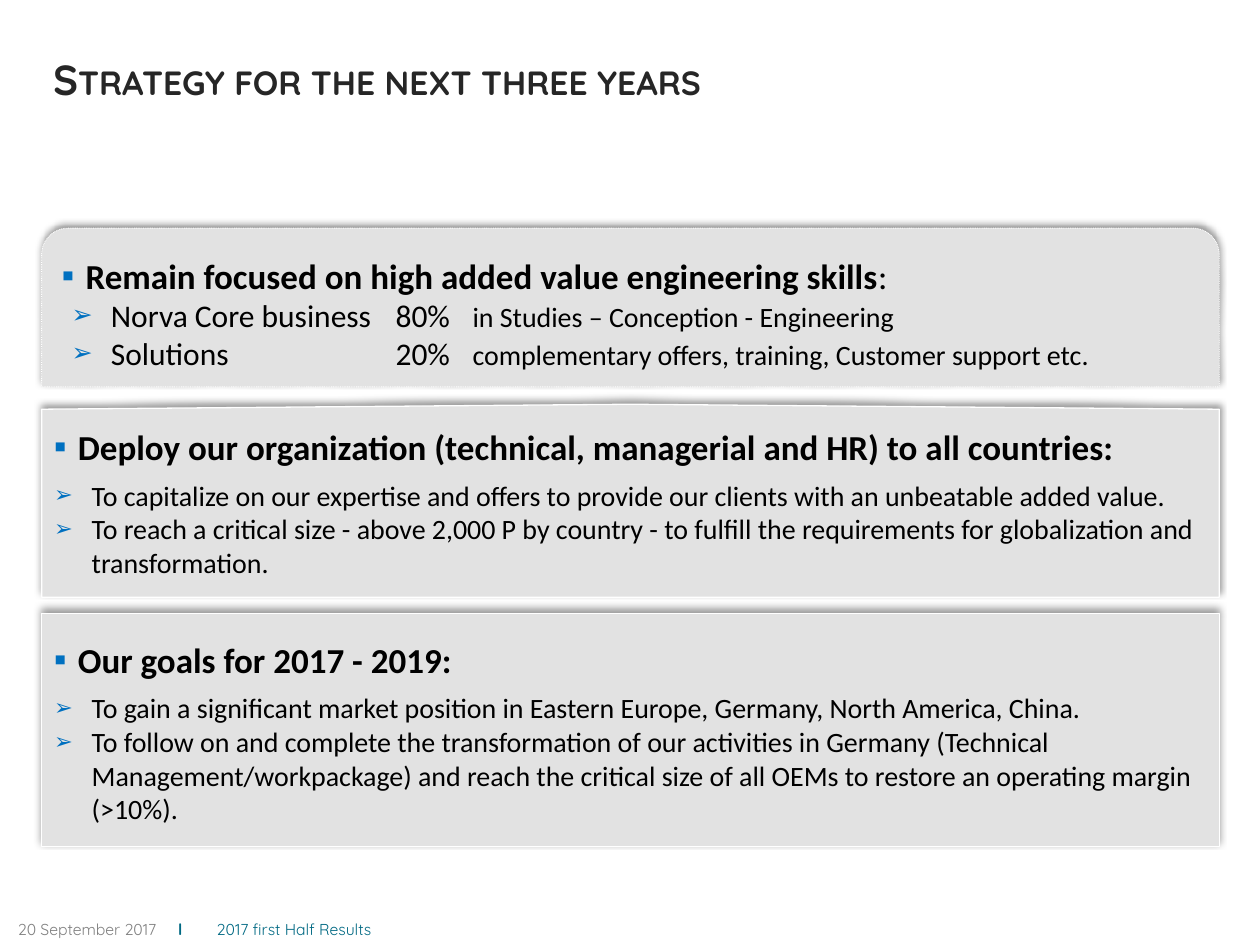
from dataclasses import dataclass
from typing import NamedTuple

from lxml.etree import SubElement
from pptx import Presentation
from pptx.dml.color import RGBColor
from pptx.enum.dml import MSO_LINE
from pptx.enum.shapes import MSO_SHAPE as Preset
from pptx.enum.text import MSO_ANCHOR as Anchor, MSO_AUTO_SIZE as AutoSize, PP_ALIGN as Align
from pptx.oxml.ns import qn
from pptx.util import Cm, Pt

BLACK = RGBColor(0x00, 0x00, 0x00)
WHITE = RGBColor(0xFF, 0xFF, 0xFF)
PANEL_GREY = RGBColor(0xE2, 0xE2, 0xE2)
TITLE_GREY = RGBColor(0x26, 0x26, 0x26)
DATE_GREY = RGBColor(0x80, 0x80, 0x80)
FOOTER_TEAL = RGBColor(0x00, 0x69, 0x83)
BULLET_BLUE = RGBColor(0x00, 0x70, 0xC0)

PANEL_LEFT = 0.84
PANEL_WIDTH = 23.74
ROOF_RISE = 0.1


class BulletStyle(NamedTuple):
    mark: str
    indent: float
    hanging: float
    mark_percent: int = 100
    level: int = 0


class Phrase(NamedTuple):
    text: str
    size: float = 16
    bold: bool = False


@dataclass
class Point:
    style: BulletStyle
    phrases: list[Phrase]
    tabs: tuple[float, ...] = ()
    gap_after: float = 0


@dataclass
class Panel:
    outline: str
    top: float
    height: float
    points: list[Point]
    border: float = 0.75


HEADING = BulletStyle("▪", 0.48, 0.48)
SHARE = BulletStyle("➢", 0.99, 0.79, 80, 1)
DETAIL = BulletStyle("➢", 0.76, 0.76, 80)
SHARE_TABS = (6.73, 8.28)


def heading(text: str) -> Point:
    return Point(HEADING, [Phrase(text, 20, True)], gap_after=6)


def share(name: str, percent: str, scope: str) -> Point:
    return Point(SHARE, [Phrase(f"{name}\t{percent}\t", 18), Phrase(scope)], SHARE_TABS)


def detail(text: str) -> Point:
    return Point(DETAIL, [Phrase(text)])


PANELS = [
    Panel("rounded", 4.6, 3.2, [
        Point(HEADING, [
            Phrase("Remain focused on high added value engineering skills", 20, True),
            Phrase(":", 20),
        ]),
        share("Norva Core business", "80%", "in Studies – Conception - Engineering"),
        share("Solutions", "20%", "complementary offers, training, Customer support etc."),
    ], border=0.5),
    Panel("roof", 8.15, 3.89, [
        heading("Deploy our organization (technical, managerial and HR) to all countries:"),
        detail("To capitalize on our expertise and offers to provide our clients "
               "with an unbeatable added value."),
        detail("To reach a critical size - above 2,000 P by country - to fulfill "
               "the requirements for globalization and transformation."),
    ]),
    Panel("plain", 12.37, 4.7, [
        heading("Our goals for 2017 - 2019:"),
        detail("To gain a significant market position in Eastern Europe, Germany, "
               "North America, China."),
        detail("To follow on and complete the transformation of our activities in Germany "
               "(Technical Management/workpackage) and reach the critical size of all OEMs "
               "to restore an operating margin (>10%)."),
    ]),
]


def write(paragraph, text: str, *, size: float, color: RGBColor = BLACK,
          font: str = "Calibri", bold: bool = False, small_caps: bool = False) -> None:
    run = paragraph.add_run()
    run.text = text
    run.font.size = Pt(size)
    run.font.name = font
    run.font.bold = bold
    run.font.color.rgb = color
    if small_caps:
        run.font._element.set("cap", "small")


def set_frame(frame, margins: tuple[float, ...] = (0, 0, 0, 0)) -> None:
    frame.auto_size = AutoSize.NONE
    frame.word_wrap = True
    frame.vertical_anchor = Anchor.MIDDLE
    (frame.margin_left, frame.margin_top,
     frame.margin_right, frame.margin_bottom) = map(Cm, margins)


def add_tabs(paragraph, stops: tuple[float, ...]) -> None:
    tab_list = SubElement(paragraph._p.get_or_add_pPr(), qn("a:tabLst"))
    for stop in stops:
        SubElement(tab_list, qn("a:tab"), pos=str(int(Cm(stop))), algn="l")


def add_bullet(paragraph, style: BulletStyle) -> None:
    paragraph.level = style.level
    properties = paragraph._p.get_or_add_pPr()
    properties.set("marL", str(int(Cm(style.indent))))
    properties.set("indent", str(-int(Cm(style.hanging))))
    mark_color = SubElement(properties, qn("a:buClr"))
    SubElement(mark_color, qn("a:srgbClr"), val=str(BULLET_BLUE))
    SubElement(properties, qn("a:buSzPct"), val=str(style.mark_percent * 1000))
    SubElement(properties, qn("a:buFont"), typeface="Calibri")
    SubElement(properties, qn("a:buChar"), char=style.mark)


def add_shadow(shape) -> None:
    shape.shadow.inherit = False
    effects = shape._element.spPr.find(qn("a:effectLst"))
    outer = SubElement(effects, qn("a:outerShdw"), blurRad=str(int(Pt(4))),
                       dist=str(int(Pt(3))), dir=str(270 * 60000), rotWithShape="0")
    tint = SubElement(outer, qn("a:srgbClr"), val=str(BLACK))
    SubElement(tint, qn("a:alpha"), val="40000")


def add_outline(slide, panel: Panel):
    left, top, width, height = map(Cm, (PANEL_LEFT, panel.top, PANEL_WIDTH, panel.height))
    if panel.outline == "roof":
        eaves = top + Cm(ROOF_RISE)
        right, bottom = left + width, top + height
        builder = slide.shapes.build_freeform(left, eaves)
        builder.add_line_segments([(left + width // 2, top), (right, eaves),
                                   (right, bottom), (left, bottom)], close=True)
        return builder.convert_to_shape()
    preset = Preset.ROUND_2_SAME_RECTANGLE if panel.outline == "rounded" else Preset.RECTANGLE
    return slide.shapes.add_shape(preset, left, top, width, height)


def draw_panel(slide, panel: Panel) -> None:
    shape = add_outline(slide, panel)
    shape.fill.solid()
    shape.fill.fore_color.rgb = PANEL_GREY
    shape.line.color.rgb = WHITE
    shape.line.width = Pt(panel.border)
    if panel.outline == "rounded":
        shape.line.dash_style = MSO_LINE.ROUND_DOT
    add_shadow(shape)
    frame = shape.text_frame
    set_frame(frame, (0.25, 0.2, 0.25, 0.13))
    for index, point in enumerate(panel.points):
        paragraph = frame.add_paragraph() if index else frame.paragraphs[0]
        add_bullet(paragraph, point.style)
        if point.tabs:
            add_tabs(paragraph, point.tabs)
        paragraph.alignment = Align.LEFT
        paragraph.space_after = Pt(point.gap_after)
        for phrase in point.phrases:
            write(paragraph, phrase.text, size=phrase.size, bold=phrase.bold)


def draw_title(slide) -> None:
    title = slide.shapes.title
    title.left, title.top, title.width, title.height = map(Cm, (1.07, 0.33, 21.13, 2.51))
    set_frame(title.text_frame)
    paragraph = title.text_frame.paragraphs[0]
    paragraph.alignment = Align.LEFT
    write(paragraph, "Strategy for the next three years", size=24, color=TITLE_GREY,
          font="Quicksand", bold=True, small_caps=True)


def draw_footer(slide) -> None:
    footer = slide.shapes.add_textbox(*map(Cm, (0.36, 18.36, 12.6, 0.74)))
    set_frame(footer.text_frame)
    paragraph = footer.text_frame.paragraphs[0]
    add_tabs(paragraph, (3.23, 4.01))
    for text, color, bold in (("20 September 2017\t", DATE_GREY, False),
                              ("l\t", FOOTER_TEAL, True),
                              ("2017 first Half Results", FOOTER_TEAL, False)):
        write(paragraph, text, size=9, color=color, font="Quicksand", bold=bold)


def main() -> None:
    deck = Presentation()
    deck.slide_width, deck.slide_height = Cm(25.4), Cm(19.05)
    slide = deck.slides.add_slide(deck.slide_layouts[5])
    draw_footer(slide)
    draw_title(slide)
    for panel in PANELS:
        draw_panel(slide, panel)
    deck.save("out.pptx")


if __name__ == "__main__":
    main()
